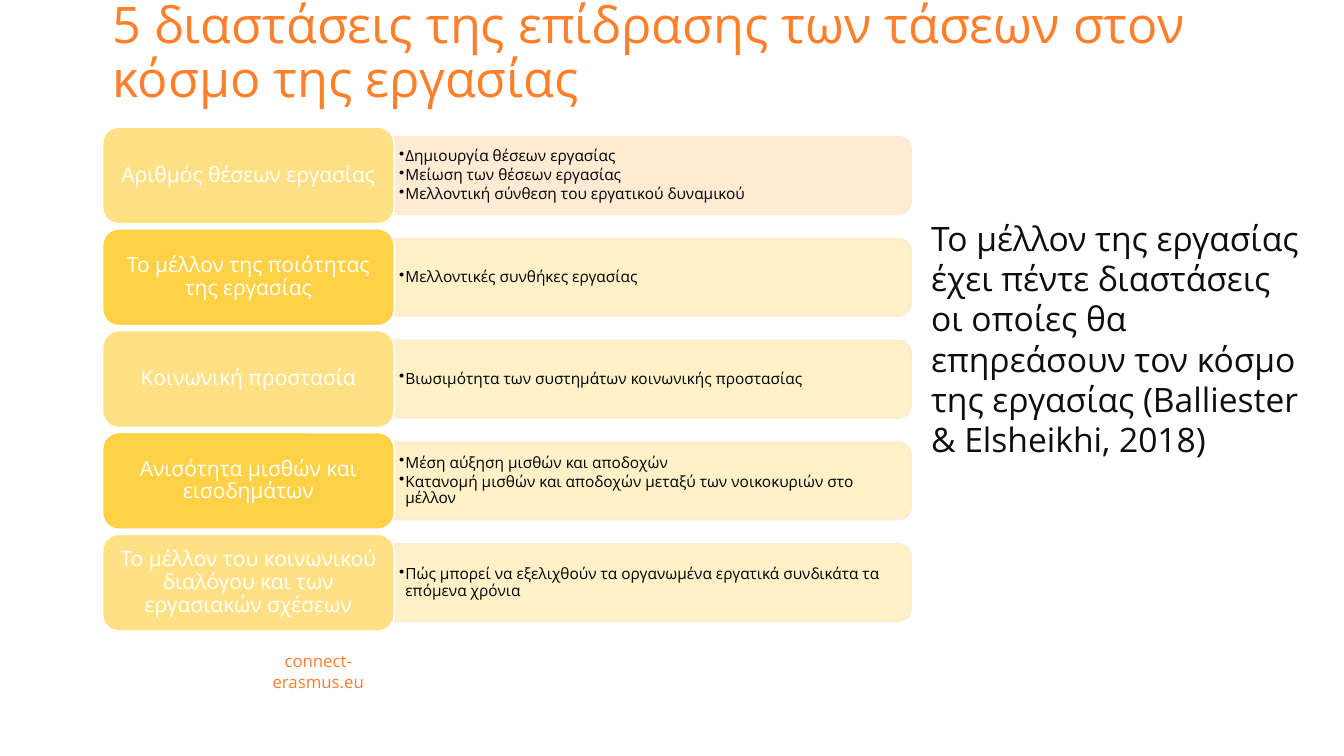
from lxml import etree
from pptx import Presentation
from pptx.dml.color import RGBColor
from pptx.enum.shapes import MSO_SHAPE
from pptx.enum.text import MSO_ANCHOR, MSO_AUTO_SIZE, PP_ALIGN
from pptx.oxml.ns import qn
from pptx.util import Pt

TITLE = "5 διαστάσεις της επίδρασης των τάσεων στον κόσμο της εργασίας"
SUMMARY = ("Το μέλλον της εργασίας έχει πέντε διαστάσεις οι οποίες θα επηρεάσουν "
           "τον κόσμο της εργασίας (Balliester & Elsheikhi, 2018)")
SITE = "connect-erasmus.eu"
DIMENSIONS = [
    ("Αριθμός θέσεων εργασίας",
     ["Δημιουργία θέσεων εργασίας",
      "Μείωση των θέσεων εργασίας",
      "Μελλοντική σύνθεση του εργατικού δυναμικού"]),
    ("Το μέλλον της ποιότητας της εργασίας",
     ["Μελλοντικές συνθήκες εργασίας"]),
    ("Κοινωνική προστασία",
     ["Βιωσιμότητα των συστημάτων κοινωνικής προστασίας"]),
    ("Ανισότητα μισθών και εισοδημάτων",
     ["Μέση αύξηση μισθών και αποδοχών",
      "Κατανομή μισθών και αποδοχών μεταξύ των νοικοκυριών στο μέλλον"]),
    ("Το μέλλον του κοινωνικού διαλόγου και των εργασιακών σχέσεων",
     ["Πώς μπορεί να εξελιχθούν τα οργανωμένα εργατικά συνδικάτα τα επόμενα χρόνια"]),
]

FONT = "Open Sans"
ORANGE = RGBColor(0xFF, 0x7F, 0x2A)
INK = RGBColor(0x0D, 0x0D, 0x0D)
BLACK = RGBColor(0x00, 0x00, 0x00)
WHITE = RGBColor(0xFF, 0xFF, 0xFF)
PEACH = RGBColor(0xFF, 0xE8, 0xCF)
CREAM = RGBColor(0xFF, 0xF0, 0xC2)
LABEL_FILLS = [RGBColor(0xFF, 0xE0, 0x85), RGBColor(0xFF, 0xD1, 0x47)]

ROUNDED = MSO_SHAPE.ROUNDED_RECTANGLE
ROUNDED_TOP = MSO_SHAPE.ROUND_2_SAME_RECTANGLE
LEFT, CENTER = PP_ALIGN.LEFT, PP_ALIGN.CENTER
TOP, MIDDLE, BOTTOM = MSO_ANCHOR.TOP, MSO_ANCHOR.MIDDLE, MSO_ANCHOR.BOTTOM

# Row geometry in points
LABEL_LEFT, LABEL_TOP, LABEL_WIDTH, LABEL_HEIGHT = 73.4, 90.9, 208.1, 69
ROW_PITCH = 72.7
BAND_LEFT = LABEL_LEFT + LABEL_WIDTH
BAND_LENGTH, BAND_HEIGHT = 369.4, 55.4
BULLET_WIDTH, BULLET_HEIGHT = 367.2, 49.7
BULLET_INDENT = 4.5


def write(shape, lines, size, color, align=LEFT, anchor=TOP, spacing=1.0,
          insets=(7.2, 3.6, 7.2, 3.6), bulleted=False):
    frame = shape.text_frame
    frame.word_wrap = True
    frame.auto_size = MSO_AUTO_SIZE.NONE
    frame.vertical_anchor = anchor
    (frame.margin_left, frame.margin_top,
     frame.margin_right, frame.margin_bottom) = map(Pt, insets)
    frame.text = "\n".join(lines)
    for para in frame.paragraphs:
        if bulleted:
            add_bullet(para)
            para.space_after = Pt(1.65)
        para.alignment = align
        para.line_spacing = spacing
        para.font.name = FONT
        para.font.size = Pt(size)
        para.font.color.rgb = color


def add_bullet(para):
    properties = para._p.get_or_add_pPr()
    properties.set("marL", str(Pt(BULLET_INDENT)))
    properties.set("indent", str(-Pt(BULLET_INDENT)))
    etree.SubElement(properties, qn("a:buChar")).set("char", "•")


def add_panel(slide, kind, box, fill, line):
    panel = slide.shapes.add_shape(kind, *map(Pt, box))
    panel.shadow.inherit = False
    panel.fill.solid()
    panel.fill.fore_color.rgb = fill
    panel.line.color.rgb = line
    panel.line.width = Pt(1)
    return panel


def add_text_box(slide, box, *args, **options):
    write(slide.shapes.add_textbox(*map(Pt, box)), *args, **options)


def add_dimension(slide, row, label, bullets):
    top = LABEL_TOP + row * ROW_PITCH
    middle = top + LABEL_HEIGHT / 2

    # Band: an upright shape turned so that its round end faces right
    band = add_panel(slide, ROUNDED_TOP,
                     (BAND_LEFT + (BAND_LENGTH - BAND_HEIGHT) / 2,
                      middle - BAND_LENGTH / 2, BAND_HEIGHT, BAND_LENGTH),
                     CREAM if row else PEACH, PEACH)
    band.rotation = 90
    for color in band._element.spPr.iter(qn("a:srgbClr")):
        etree.SubElement(color, qn("a:alpha")).set("val", "90000")

    # Bullets over the band
    add_text_box(slide, (BAND_LEFT, middle - BULLET_HEIGHT / 2, BULLET_WIDTH, BULLET_HEIGHT),
                 bullets, 11, BLACK, anchor=MIDDLE, spacing=0.9,
                 insets=(3.6, 1.5, 3.6, 1.5), bulleted=True)

    # Label
    panel = add_panel(slide, ROUNDED, (LABEL_LEFT, top, LABEL_WIDTH, LABEL_HEIGHT),
                      LABEL_FILLS[row % 2], WHITE)
    write(panel, [label], 15, WHITE, CENTER, MIDDLE, 0.9, (4.3, 2, 4.3, 2))


def main():
    deck = Presentation()
    deck.slide_width, deck.slide_height = Pt(960), Pt(540)
    slide = deck.slides.add_slide(deck.slide_layouts[5])

    # Title
    title = slide.shapes.title
    title.left, title.top, title.width, title.height = map(Pt, (73.4, -11.5, 895.7, 92.9))
    write(title, [TITLE], 36, ORANGE, anchor=BOTTOM, spacing=0.9,
          insets=(7.2, 3.6, 30, 3.6))

    # Summary and site address
    add_text_box(slide, (658, 152, 285, 238), [SUMMARY], 24, INK)
    add_text_box(slide, (164, 468.7, 126.7, 21.6), [SITE], 12, ORANGE, CENTER, MIDDLE)

    # Five dimensions
    for row, (label, bullets) in enumerate(DIMENSIONS):
        add_dimension(slide, row, label, bullets)

    deck.save("out.pptx")


if __name__ == "__main__":
    main()
